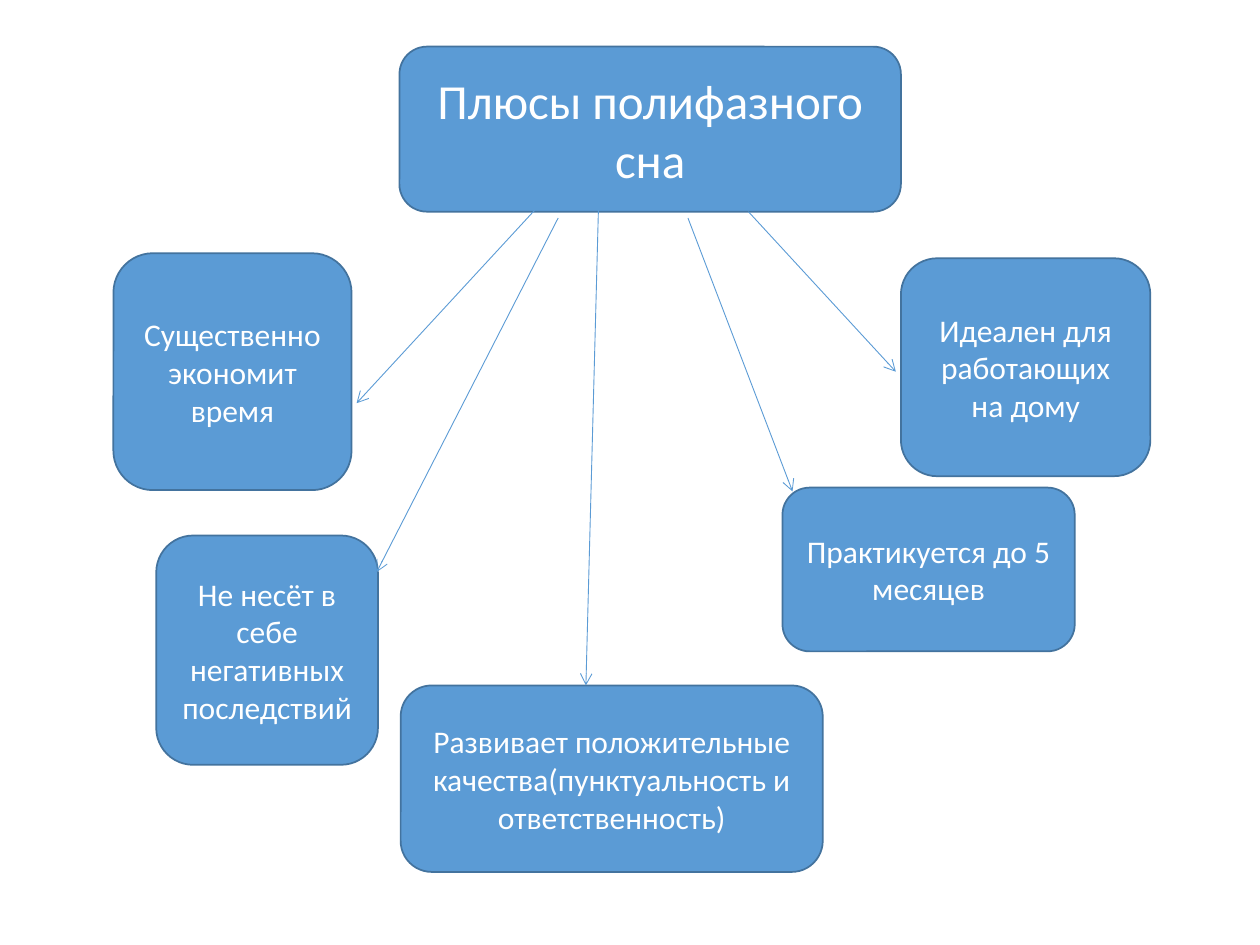
from lxml.etree import SubElement
from pptx import Presentation
from pptx.dml.color import RGBColor
from pptx.enum.shapes import MSO_CONNECTOR, MSO_SHAPE
from pptx.enum.text import MSO_ANCHOR, PP_ALIGN
from pptx.oxml.ns import qn
from pptx.util import Inches, Pt

BLUE = RGBColor(0x5B, 0x9B, 0xD5)
EDGE = RGBColor(0x43, 0x73, 0x9E)
WHITE = RGBColor(0xFF, 0xFF, 0xFF)

TITLE = ("Плюсы полифазного сна", (3.17, 0.37, 3.98, 1.31))

# Text, box, and the start and end of the arrow that leads to it
PLUSES = [
    ("Существенно экономит время", (0.9, 2.01, 1.89, 1.88),
     (4.27, 1.64), (2.83, 3.2)),
    ("Не несёт в себе негативных последствий", (1.24, 4.25, 1.76, 1.82),
     (4.43, 1.73), (2.99, 4.54)),
    ("Развивает положительные качества(пунктуальность и ответственность)",
     (3.18, 5.44, 3.35, 1.48), (4.75, 1.64), (4.65, 5.44)),
    ("Практикуется до 5 месяцев", (6.21, 3.87, 2.32, 1.3),
     (5.46, 1.73), (6.29, 3.9)),
    ("Идеален для работающих на дому", (7.15, 2.05, 1.98, 1.73),
     (5.94, 1.68), (7.11, 2.95)),
]


def add_card(slide, text, box, size):
    card = slide.shapes.add_shape(MSO_SHAPE.ROUNDED_RECTANGLE, *map(Inches, box))
    card.shadow.inherit = False
    card.fill.solid()
    card.fill.fore_color.rgb = BLUE
    card.line.color.rgb = EDGE
    card.line.width = Pt(1)
    frame = card.text_frame
    frame.word_wrap = True
    frame.vertical_anchor = MSO_ANCHOR.MIDDLE
    para = frame.paragraphs[0]
    para.alignment = PP_ALIGN.CENTER
    run = para.add_run()
    run.text = text
    for name, value in {"name": "Calibri", "size": Pt(size)}.items():
        setattr(run.font, name, value)
    run.font.color.rgb = WHITE


def add_arrow(slide, start, end):
    arrow = slide.shapes.add_connector(
        MSO_CONNECTOR.STRAIGHT, *map(Inches, start + end))
    arrow.line.color.rgb = BLUE
    arrow.line.width = Pt(0.5)
    SubElement(arrow.line._get_or_add_ln(), qn("a:tailEnd"), type="arrow")
    SubElement(arrow._element.spPr, qn("a:effectLst"))


def add_map(slide, title, pluses):
    """Draw the title card, the cards around it and the arrows to them."""
    add_card(slide, *title, size=28)
    for text, box, _, _ in pluses:
        add_card(slide, text, box, size=18)
    for _, _, start, end in pluses:
        add_arrow(slide, start, end)


def main():
    deck = Presentation()
    deck.slide_width, deck.slide_height = Inches(10), Inches(7.5)
    slide = deck.slides.add_slide(deck.slide_layouts[6])
    add_map(slide, TITLE, PLUSES)
    deck.save("out.pptx")


if __name__ == "__main__":
    main()
